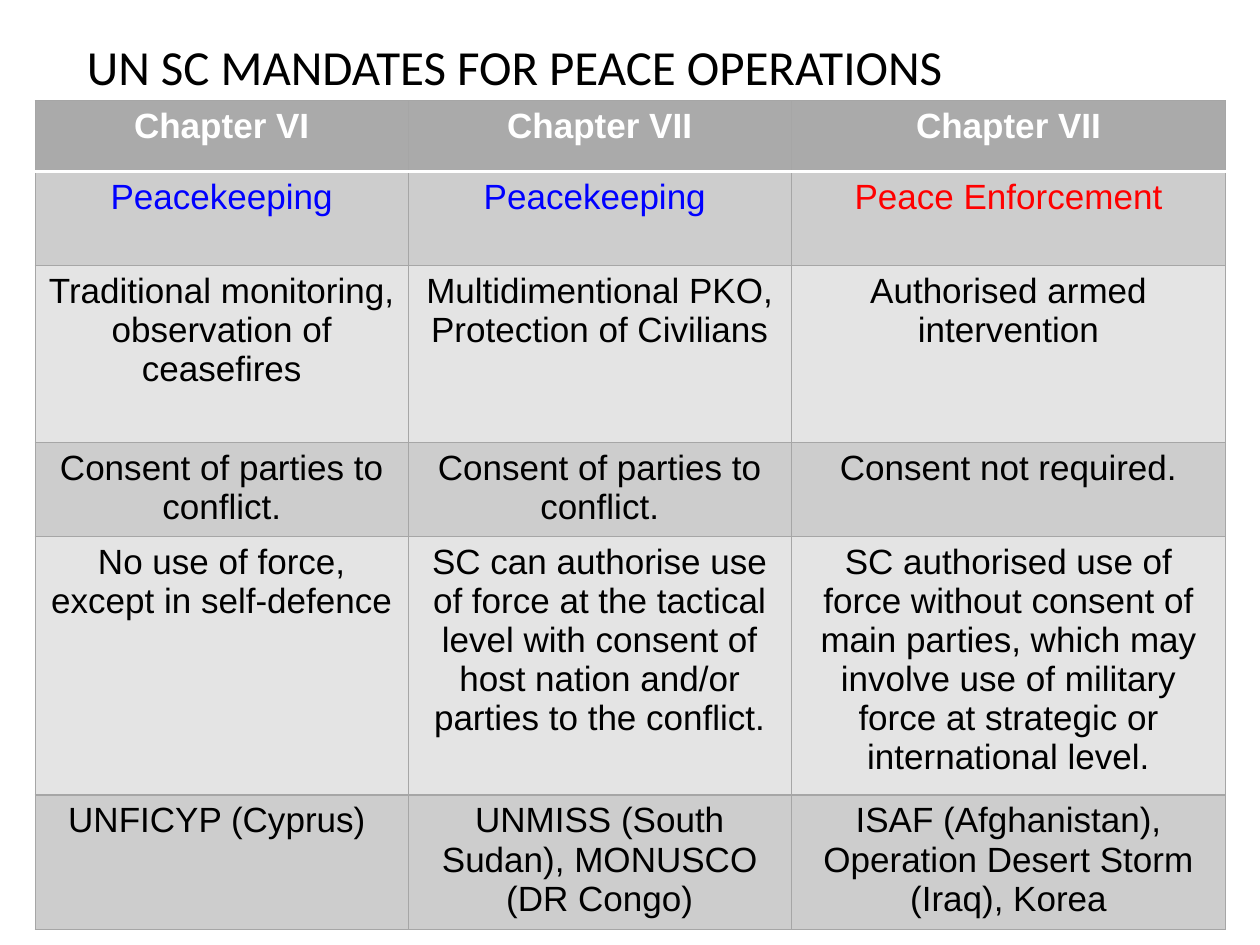
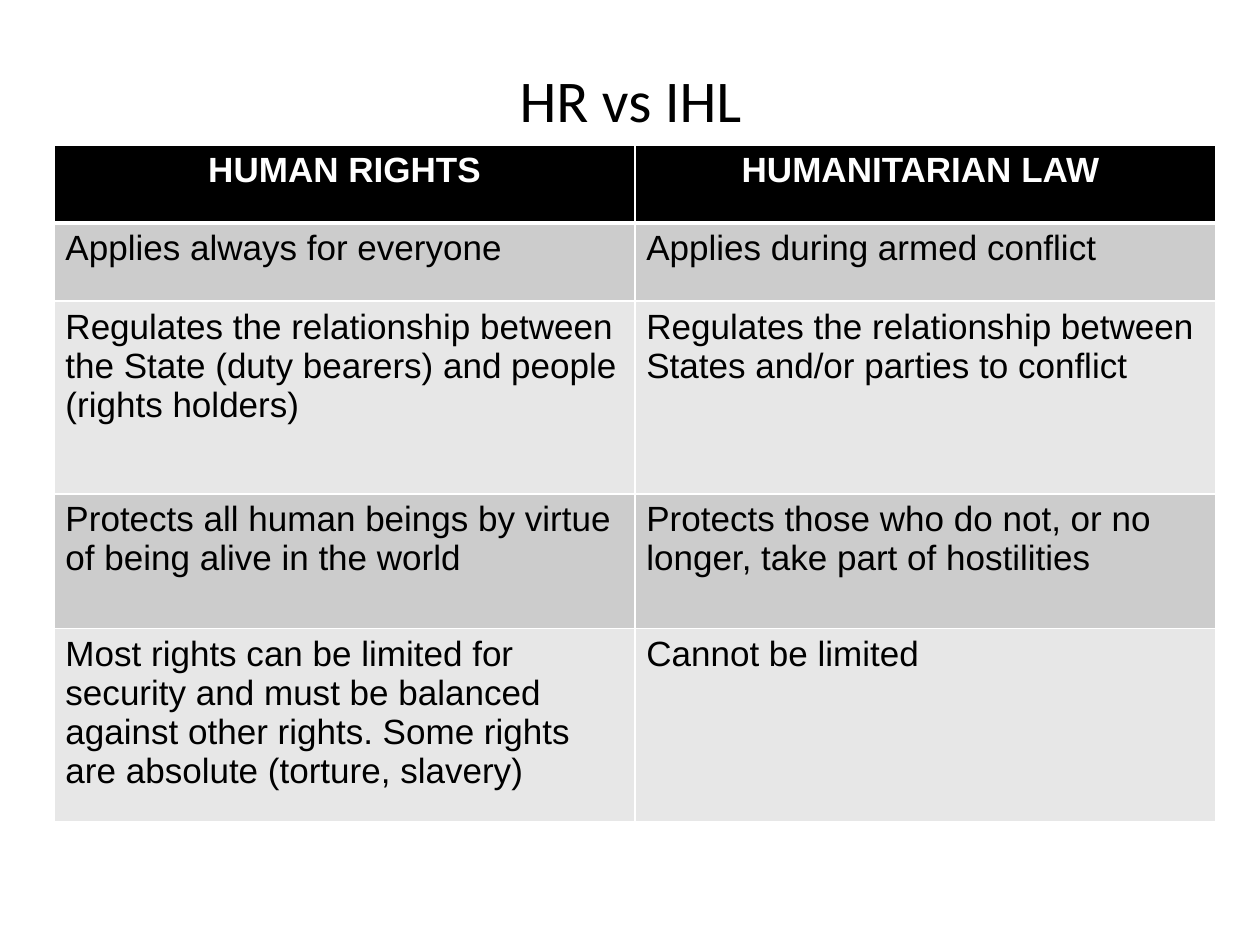
from dataclasses import dataclass

from lxml import etree
from pptx import Presentation
from pptx.dml.color import RGBColor
from pptx.enum import text
from pptx.oxml import ns
from pptx.util import Inches, Pt

BLACK, WHITE, BLUE, RED = "000000", "FFFFFF", "0000FF", "FF0000"
LEFT, CENTER = text.PP_ALIGN.LEFT, text.PP_ALIGN.CENTER
MARGINS = {"margin_left": 0.09, "margin_right": 0.09,
           "margin_top": 0.05, "margin_bottom": 0.05}


@dataclass
class Title:
    words: str
    top: float
    height: float
    size: float
    align: text.PP_ALIGN


@dataclass
class Grid:
    left: float
    top: float
    cols: list[float]
    heights: list[float]
    rows: list[list[str]]
    head: str
    bands: tuple[str, str]
    align: text.PP_ALIGN
    line: tuple[str, float]
    rule: float  # width of the white line under the header
    tints: dict[tuple[int, int], str]


def rgb(code: str) -> RGBColor:
    return RGBColor.from_string(code)


def style(par, align, **font) -> None:
    """Align a paragraph and set its font from format values."""
    par.alignment = align
    par.font.color.rgb = rgb(font.pop("color"))
    for key, value in font.items():
        setattr(par.font, key, value)


def add_title(slide, title: Title) -> None:
    box = slide.shapes.title
    box.left, box.top = Inches(0.61), Inches(title.top)
    box.width, box.height = Inches(8.79), Inches(title.height)
    frame = box.text_frame
    frame.text = title.words
    frame.word_wrap = True
    frame.auto_size = text.MSO_AUTO_SIZE.NONE
    frame.vertical_anchor = text.MSO_ANCHOR.TOP
    for side in MARGINS:
        setattr(frame, side, Inches(0.08))
    style(frame.paragraphs[0], title.align, name="Calibri",
          size=Pt(title.size), color=BLACK, bold=False)


def add_edges(cell, edges: dict[str, tuple[str, float]]) -> None:
    """Draw cell borders; they must come before the fill."""
    props = cell._tc.get_or_add_tcPr()
    for place, (side, (color, width)) in enumerate(edges.items()):
        line = etree.Element(ns.qn(f"a:ln{side}"), w=str(Pt(width)))
        fill = etree.SubElement(line, ns.qn("a:solidFill"))
        etree.SubElement(fill, ns.qn("a:srgbClr"), val=color)
        props.insert(place, line)


def fill_cell(cell, grid: Grid, row: int, col: int) -> None:
    first = row == 0
    cell.text = grid.rows[row][col]
    for side, gap in MARGINS.items():
        setattr(cell, side, Inches(gap))
    cell.fill.solid()
    cell.fill.fore_color.rgb = rgb(grid.head if first else grid.bands[(row - 1) % 2])
    edges = dict.fromkeys("LRTB", grid.line)
    if row < 2:
        edges["B" if first else "T"] = (WHITE, grid.rule)
    add_edges(cell, edges)
    color = WHITE if first else grid.tints.get((row, col), BLACK)
    for par in cell.text_frame.paragraphs:
        style(par, CENTER if first else grid.align, name="Arial",
              size=Pt(20), color=color, bold=first)


def add_grid(slide, grid: Grid) -> None:
    table = slide.shapes.add_table(
        len(grid.rows), len(grid.cols), Inches(grid.left), Inches(grid.top),
        Inches(sum(grid.cols)), Inches(sum(grid.heights))).table
    for col, width in enumerate(grid.cols):
        table.columns[col].width = Inches(width)
    for row, height in enumerate(grid.heights):
        table.rows[row].height = Inches(height)
        for col in range(len(grid.cols)):
            fill_cell(table.cell(row, col), grid, row, col)


MANDATES = Grid(
    left=0.28, top=0.8, cols=[2.96, 3.04, 3.45],
    heights=[0.56, 0.75, 1.4, 0.75, 2.05, 1.07],
    rows=[
        ["Chapter VI", "Chapter VII", "Chapter VII"],
        ["Peacekeeping", "Peacekeeping ", "Peace Enforcement"],
        ["Traditional monitoring, observation of ceasefires",
         "Multidimentional PKO,\nProtection of Civilians",
         "Authorised armed intervention"],
        ["Consent of parties to conflict.", "Consent of parties to conflict.",
         "Consent not required."],
        ["No use of force, except in self-defence",
         "SC can authorise use of force at the tactical level with consent of "
         "host nation and/or parties to the conflict.",
         "SC authorised use of force without consent of main parties, which may "
         "involve use of military force at strategic or international level."],
        ["UNFICYP (Cyprus) ", "UNMISS (South Sudan), MONUSCO (DR Congo)",
         "ISAF (Afghanistan), Operation Desert Storm (Iraq), Korea"],
    ],
    head="AAAAAA", bands=("CDCDCD", "E4E4E4"), align=CENTER,
    line=("A6A6A6", 0.75), rule=2,
    tints={(1, 0): BLUE, (1, 1): BLUE, (1, 2): RED})

RIGHTS = Grid(
    left=0.43, top=1.15, cols=[4.61, 4.61],
    heights=[0.62, 0.62, 1.53, 1.07, 1.53],
    rows=[
        ["HUMAN RIGHTS", "HUMANITARIAN LAW "],
        ["Applies always for everyone", "Applies during armed conflict"],
        ["Regulates the relationship between the State (duty bearers) and "
         "people (rights holders)",
         "Regulates the relationship between States and/or parties to conflict"],
        ["Protects all human beings by virtue of being alive in the world",
         "Protects those who do not, or no longer, take part of hostilities"],
        ["Most rights can be limited for security and must be balanced against "
         "other rights. Some rights are absolute (torture, slavery)",
         "Cannot be limited"],
    ],
    head=BLACK, bands=("CCCCCC", "E7E7E7"), align=LEFT,
    line=(WHITE, 1), rule=3, tints={})

PAGES = [
    (Title("UN SC MANDATES FOR PEACE OPERATIONS", 0.21, 1.42, 28, LEFT), MANDATES),
    (Title("HR vs IHL", 0.42, 1.21, 33.8, CENTER), RIGHTS),
]


def main() -> None:
    deck = Presentation()
    deck.slide_width, deck.slide_height = Inches(10), Inches(7.5)
    for title, grid in PAGES:
        slide = deck.slides.add_slide(deck.slide_layouts[5])
        add_title(slide, title)
        add_grid(slide, grid)
    deck.save("out.pptx")


if __name__ == "__main__":
    main()
